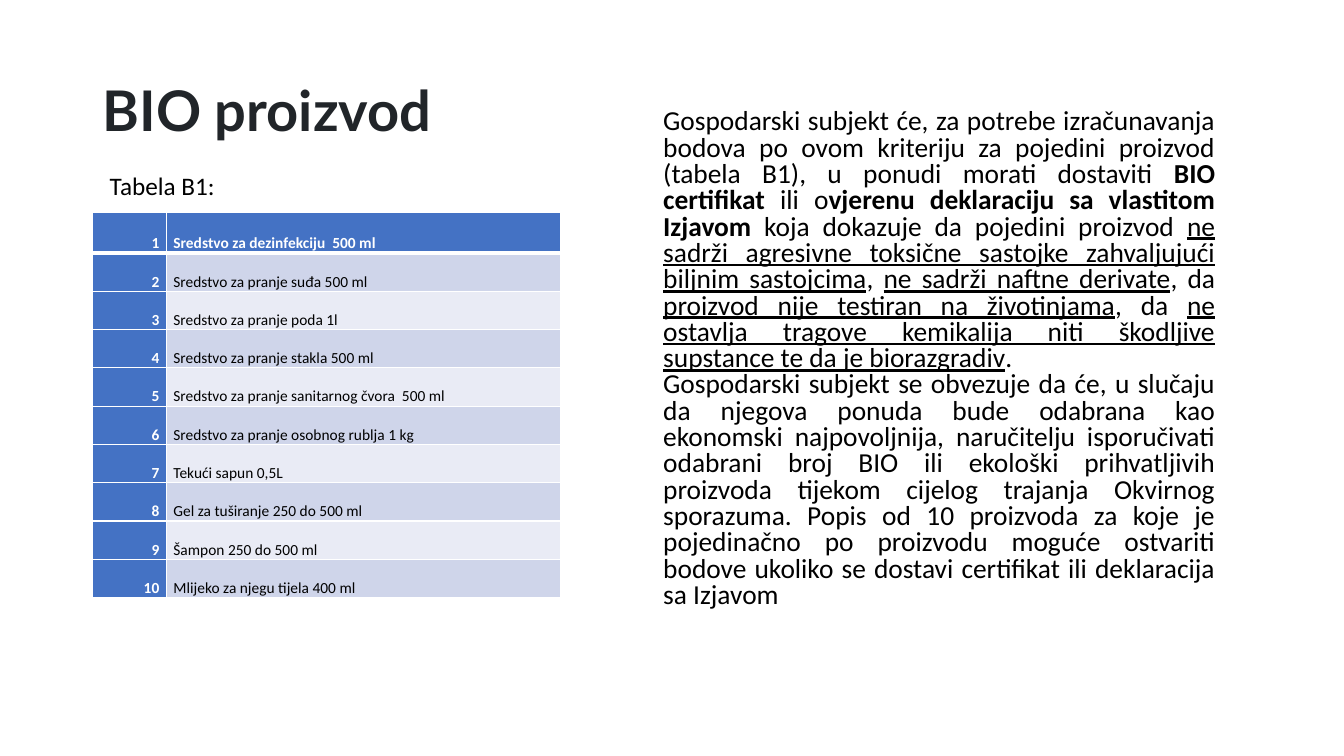
from lxml.etree import SubElement
from pptx import Presentation
from pptx.dml.color import RGBColor
from pptx.enum.text import MSO_ANCHOR as Anchor, PP_ALIGN as Align
from pptx.oxml.ns import qn
from pptx.util import Pt

EMU_PER_PX = 9144
WHITE = RGBColor(0xFF, 0xFF, 0xFF)
BLACK = RGBColor(0x00, 0x00, 0x00)
CHARCOAL = RGBColor(0x21, 0x25, 0x29)
BLUE = RGBColor(0x44, 0x72, 0xC4)
BAND_DARK = RGBColor(0xCF, 0xD5, 0xEA)
BAND_LIGHT = RGBColor(0xE9, 0xEB, 0xF5)

PLAIN = {"bold": False}
BOLD = {"bold": True}
UNDERLINED = {"underline": True}

PRODUCTS = [
    "Sredstvo za dezinfekciju  500 ml",
    "Sredstvo za pranje suđa 500 ml",
    "Sredstvo za pranje poda 1l",
    "Sredstvo za pranje stakla 500 ml",
    "Sredstvo za pranje sanitarnog čvora  500 ml",
    "Sredstvo za pranje osobnog rublja 1 kg",
    "Tekući sapun 0,5L",
    "Gel za tuširanje 250 do 500 ml",
    "Šampon 250 do 500 ml",
    "Mlijeko za njegu tijela 400 ml",
]

CRITERIA = [
    [
        ("Gospodarski subjekt će, za potrebe izračunavanja bodova po ovom kriteriju "
         "za pojedini proizvod (tabela B1), u ponudi morati dostaviti ", PLAIN),
        ("BIO certifikat ", BOLD),
        ("ili o", PLAIN),
        ("vjerenu deklaraciju sa vlastitom Izjavom", BOLD),
        (" koja dokazuje da pojedini proizvod ", PLAIN),
        ("ne sadrži agresivne toksične sastojke zahvaljujući biljnim sastojcima", UNDERLINED),
        (", ", PLAIN),
        ("ne sadrži naftne derivate", UNDERLINED),
        (", da ", PLAIN),
        ("proizvod nije testiran na životinjama", UNDERLINED),
        (", da ", PLAIN),
        ("ne ostavlja tragove kemikalija niti škodljive supstance te da je biorazgradiv",
         UNDERLINED),
        (". ", PLAIN),
    ],
    [
        ("Gospodarski subjekt se obvezuje da će, u slučaju da njegova ponuda bude odabrana "
         "kao ekonomski najpovoljnija, naručitelju isporučivati odabrani broj BIO ili "
         "ekološki prihvatljivih proizvoda tijekom cijelog trajanja Okvirnog sporazuma. "
         "Popis od 10 proizvoda za koje je pojedinačno po proizvodu moguće ostvariti bodove "
         "ukoliko se dostavi certifikat ili deklaracija sa Izjavom", PLAIN),
    ],
]


def px(length):
    return length * EMU_PER_PX


def apply(target, values):
    for name, value in values.items():
        setattr(target, name, value)


class SlideBuilder:
    def __init__(self, slide, font="Calibri"):
        self.slide = slide
        self.font = font

    def fill_paragraph(self, paragraph, runs, size, color=BLACK, font=None, **layout):
        apply(paragraph, layout)
        for text, emphasis in runs:
            run = paragraph.add_run()
            run.text = text
            apply(run.font, {"name": font or self.font, "size": Pt(size), **emphasis})
            run.font.color.rgb = color

    def text(self, box, paragraphs, size, anchor=Anchor.TOP, **style):
        frame = self.slide.shapes.add_textbox(*map(px, box)).text_frame
        apply(frame, {"word_wrap": True, "vertical_anchor": anchor})
        for index, runs in enumerate(paragraphs):
            paragraph = frame.add_paragraph() if index else frame.paragraphs[0]
            self.fill_paragraph(paragraph, runs, size, **style)

    def border(self, cell, widths):
        properties = cell._tc.get_or_add_tcPr()
        for side, width in widths.items():
            line = SubElement(properties, qn(f"a:ln{side}"), w=str(Pt(width)))
            fill = SubElement(line, qn("a:solidFill"))
            SubElement(fill, qn("a:srgbClr"), val=str(WHITE))

    def cell(self, cell, text, fill, color, emphasis, align, widths):
        self.border(cell, widths)
        cell.fill.solid()
        cell.fill.fore_color.rgb = fill
        apply(cell, {"vertical_anchor": Anchor.BOTTOM, "margin_left": px(7),
                     "margin_right": px(7), "margin_top": 0, "margin_bottom": 0})
        self.fill_paragraph(cell.text_frame.paragraphs[0], [(text, emphasis)], 11, color,
                            alignment=align, line_spacing=1.07, space_after=Pt(8))

    def numbered_table(self, left, top, widths, first_height, height, items):
        total_height = first_height + height * (len(items) - 1)
        table = self.slide.shapes.add_table(
            len(items), len(widths), *map(px, (left, top, sum(widths), total_height))).table
        for column, width in zip(table.columns, widths):
            column.width = px(width)
        for index, item in enumerate(items):
            header = index == 0
            table.rows[index].height = px(first_height if header else height)
            band = BAND_DARK if index % 2 else BAND_LIGHT
            borders = {"L": 1, "R": 1, "T": 3 if index == 1 else 1, "B": 3 if header else 1}
            self.cell(table.cell(index, 0), str(index + 1), BLUE, WHITE, BOLD,
                      Align.RIGHT, borders)
            self.cell(table.cell(index, 1), item, BLUE if header else band,
                      WHITE if header else BLACK, BOLD if header else PLAIN,
                      Align.LEFT, borders)


def main():
    deck = Presentation()
    apply(deck, {"slide_width": px(1333), "slide_height": px(750)})
    page = SlideBuilder(deck.slides.add_slide(deck.slide_layouts[6]))
    page.text((92, 40, 932, 145), [[("BIO proizvod", BOLD)]], 40, Anchor.MIDDLE,
              color=CHARCOAL, font="Lato", line_spacing=0.9)
    page.numbered_table(92, 211, (73, 391), 40, 38, PRODUCTS)
    page.text((648, 104, 567, 528), CRITERIA, 19.6,
              alignment=Align.JUSTIFY, line_spacing=0.8)
    page.text((99, 164, 200, 40), [[("Tabela B1:", PLAIN)]], 18)
    deck.save("out.pptx")


if __name__ == "__main__":
    main()
